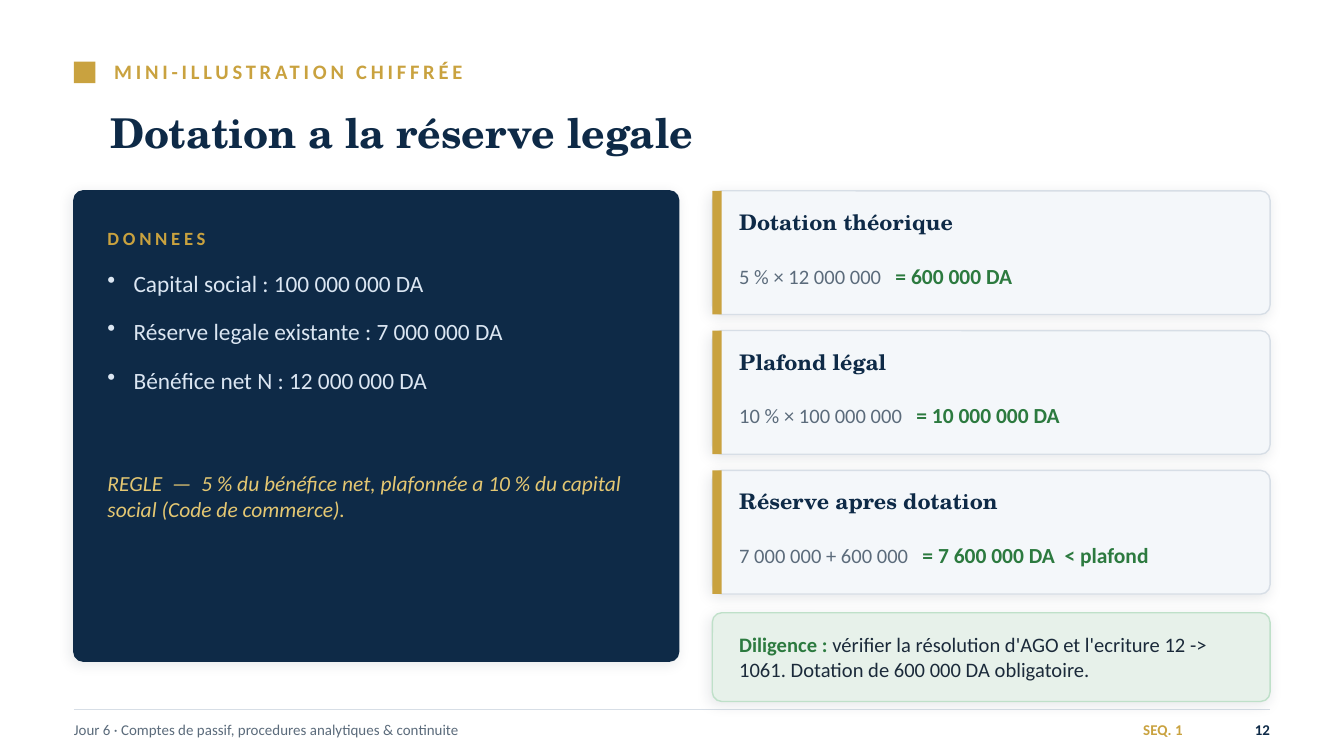
import pptx
import pptx.dml.color
import pptx.enum.shapes
import pptx.enum.text
import pptx.oxml.ns
import pptx.util
from lxml import etree

SHAPE = pptx.enum.shapes.MSO_SHAPE
ANCHOR = pptx.enum.text.MSO_ANCHOR
ALIGN = pptx.enum.text.PP_ALIGN
Inches = pptx.util.Inches
qn = pptx.oxml.ns.qn

# Content
KICKER = "MINI-ILLUSTRATION CHIFFRÉE"
TITLE = "Dotation a la réserve legale"
DATA_HEADING = "DONNEES"
DATA = [
    "Capital social : 100 000 000 DA",
    "Réserve legale existante : 7 000 000 DA",
    "Bénéfice net N : 12 000 000 DA",
]
RULE = "REGLE  —  5 % du bénéfice net, plafonnée a 10 % du capital social (Code de commerce)."
STEPS = [
    ("Dotation théorique", "5 % × 12 000 000", "= 600 000 DA"),
    ("Plafond légal", "10 % × 100 000 000", "= 10 000 000 DA"),
    ("Réserve apres dotation", "7 000 000 + 600 000", "= 7 600 000 DA  < plafond"),
]
CHECK_LABEL = "Diligence : "
CHECK = "vérifier la résolution d'AGO et l'ecriture 12 -> 1061. Dotation de 600 000 DA obligatoire."
FOOTER = "Jour 6 · Comptes de passif, procedures analytiques & continuite"
SEQUENCE = "SEQ. 1"
PAGE = "12"


class Theme:
    body, serif = "Calibri", "TeX Gyre Schola"
    navy, gold, pale_gold, ice = "0E2A47", "C9A23F", "E4C772", "DBE6F2"
    ink, gray, rule, card = "1B2A3A", "5B6B7B", "D7DEE6", "F4F7FA"
    green, mint, mint_edge = "2C7A3F", "E7F1EA", "BFE0C9"
    footer, label, small, normal, data, title = 8, 10, 11, 11.5, 12.5, 22
    line = 0.75


# Grid
WIDTH = 10
HEIGHT = WIDTH * 9 / 16
LEFT, RIGHT = 0.55, 9.45
TOP = 1.42
PANEL_WIDTH, PANEL_HEIGHT, PANEL_PAD = 4.5, 3.5, 0.25
CARD_LEFT, CARD_HEIGHT, CARD_GAP, CARD_PAD = 5.3, 0.92, 0.12, 0.2
CARD_WIDTH = RIGHT - CARD_LEFT
CHECK_TOP, CHECK_HEIGHT = 4.56, 0.66
FOOTER_LINE, FOOTER_TOP, FOOTER_HEIGHT = 5.28, 5.3, 0.25
CORNER = 0.07

presentation = pptx.Presentation()
presentation.slide_width = Inches(WIDTH)
presentation.slide_height = Inches(HEIGHT)
slide = presentation.slides.add_slide(presentation.slide_layouts[6])


def rgb(color):
    return pptx.dml.color.RGBColor.from_string(color)


def add_run(paragraph, text, size=Theme.small, color=Theme.ink, font=Theme.body,
            bold=False, italic=False, spacing=0):
    run = paragraph.add_run()
    run.text = text
    run.font.name = font
    run.font.size = pptx.util.Pt(size)
    run.font.bold = bold
    run.font.italic = italic
    run.font.color.rgb = rgb(color)
    if spacing:
        run.font._element.set("spc", str(round(spacing * 100)))


def add_bullet(paragraph, indent=pptx.util.Pt(14)):
    properties = paragraph._p.get_or_add_pPr()
    properties.set("marL", str(indent))
    properties.set("indent", str(-indent))
    etree.SubElement(properties, qn("a:buChar"), char="•")


def add_text(text, left, top, width, height, anchor=ANCHOR.MIDDLE, align=ALIGN.LEFT,
             bullets=False, space_after=0, **style):
    """Text is a string, a list of paragraphs, or a tuple of (text, style) runs."""
    box = slide.shapes.add_textbox(Inches(left), Inches(top), Inches(width), Inches(height))
    frame = box.text_frame
    frame.word_wrap = True
    frame.vertical_anchor = anchor
    frame.margin_left = frame.margin_right = frame.margin_top = frame.margin_bottom = 0
    for index, content in enumerate(text if isinstance(text, list) else [text]):
        paragraph = frame.add_paragraph() if index else frame.paragraphs[0]
        paragraph.alignment = align
        if space_after:
            paragraph.space_after = pptx.util.Pt(space_after)
        if bullets:
            add_bullet(paragraph)
        runs = content if isinstance(content, tuple) else ((content, {}),)
        for words, run_style in runs:
            add_run(paragraph, words, **{**style, **run_style})


def add_block(left, top, width, height, fill, kind=SHAPE.RECTANGLE):
    shape = slide.shapes.add_shape(kind, Inches(left), Inches(top), Inches(width), Inches(height))
    shape.shadow.inherit = False
    shape.fill.solid()
    shape.fill.fore_color.rgb = rgb(fill)
    shape.line.fill.background()
    return shape


def add_card(left, top, width, height, fill, edge):
    """Rounded panel with a thin edge and a faint soft shadow."""
    shape = add_block(left, top, width, height, fill, SHAPE.ROUNDED_RECTANGLE)
    shape.adjustments[0] = CORNER / height
    shape.line.color.rgb = rgb(edge)
    shape.line.width = pptx.util.Pt(Theme.line)
    effects = shape._element.spPr.find(qn("a:effectLst"))
    shadow = etree.SubElement(
        effects, qn("a:outerShdw"), blurRad=str(pptx.util.Pt(7)), dist=str(pptx.util.Pt(2)),
        dir=str(135 * 60000), algn="bl", rotWithShape="0")
    color = etree.SubElement(shadow, qn("a:srgbClr"), val=Theme.ink)
    etree.SubElement(color, qn("a:alpha"), val="10000")


# Heading
add_block(LEFT, 0.46, 0.16, 0.16, Theme.gold)
add_text(KICKER, LEFT + 0.3, 0.4, 8.6, 0.26, color=Theme.gold, bold=True, spacing=2)
add_text(TITLE, 0.82, 0.65, 8.7, 0.66, size=Theme.title, font=Theme.serif,
         color=Theme.navy, bold=True)

# Footer
line = slide.shapes.add_connector(pptx.enum.shapes.MSO_CONNECTOR.STRAIGHT, Inches(LEFT),
                                  Inches(FOOTER_LINE), Inches(RIGHT), Inches(FOOTER_LINE))
line.line.color.rgb = rgb(Theme.rule)
line.line.width = pptx.util.Pt(Theme.line)
etree.SubElement(line._element.spPr, qn("a:effectLst"))
for text, left, width, style in [
    (FOOTER, LEFT, 6.4, dict(color=Theme.gray)),
    (SEQUENCE, 6.9, 1.9, dict(color=Theme.gold, bold=True, align=ALIGN.RIGHT)),
    (PAGE, 9, RIGHT - 9, dict(color=Theme.navy, bold=True, align=ALIGN.RIGHT)),
]:
    add_text(text, left, FOOTER_TOP, width, FOOTER_HEIGHT, size=Theme.footer, **style)

# Data panel
add_card(LEFT, TOP, PANEL_WIDTH, PANEL_HEIGHT, Theme.navy, Theme.navy)
panel_left, panel_width = LEFT + PANEL_PAD, PANEL_WIDTH - 2 * PANEL_PAD
add_text(DATA_HEADING, panel_left, TOP + 0.2, panel_width, 0.3, size=Theme.label,
         color=Theme.gold, bold=True, spacing=2)
add_text(DATA, panel_left, 2, panel_width, 1.2, anchor=ANCHOR.TOP, bullets=True,
         space_after=11, size=Theme.data, color=Theme.ice)
add_text(RULE, panel_left, 3.5, panel_width, 0.9, anchor=ANCHOR.TOP,
         size=Theme.normal, color=Theme.pale_gold, italic=True)

# Calculation cards
text_left, text_width = CARD_LEFT + CARD_PAD, 3.85
for row, (heading, formula, result) in enumerate(STEPS):
    top = TOP + row * (CARD_HEIGHT + CARD_GAP)
    add_card(CARD_LEFT, top, CARD_WIDTH, CARD_HEIGHT, Theme.card, Theme.rule)
    add_block(CARD_LEFT, top, 0.07, CARD_HEIGHT, Theme.gold)
    add_text(heading, text_left, top + 0.08, text_width, 0.3, size=Theme.normal,
             font=Theme.serif, color=Theme.navy, bold=True)
    add_text(((formula, {}), (" ", dict(spacing=5)),
              (result, dict(size=Theme.normal, color=Theme.green, bold=True))),
             text_left, top + 0.42, text_width, 0.42, color=Theme.gray)

# Check note
add_card(CARD_LEFT, CHECK_TOP, CARD_WIDTH, CHECK_HEIGHT, Theme.mint, Theme.mint_edge)
add_text(((CHECK_LABEL, dict(color=Theme.green, bold=True)), (CHECK, {})),
         text_left, CHECK_TOP, 3.8, CHECK_HEIGHT)

presentation.save("out.pptx")
